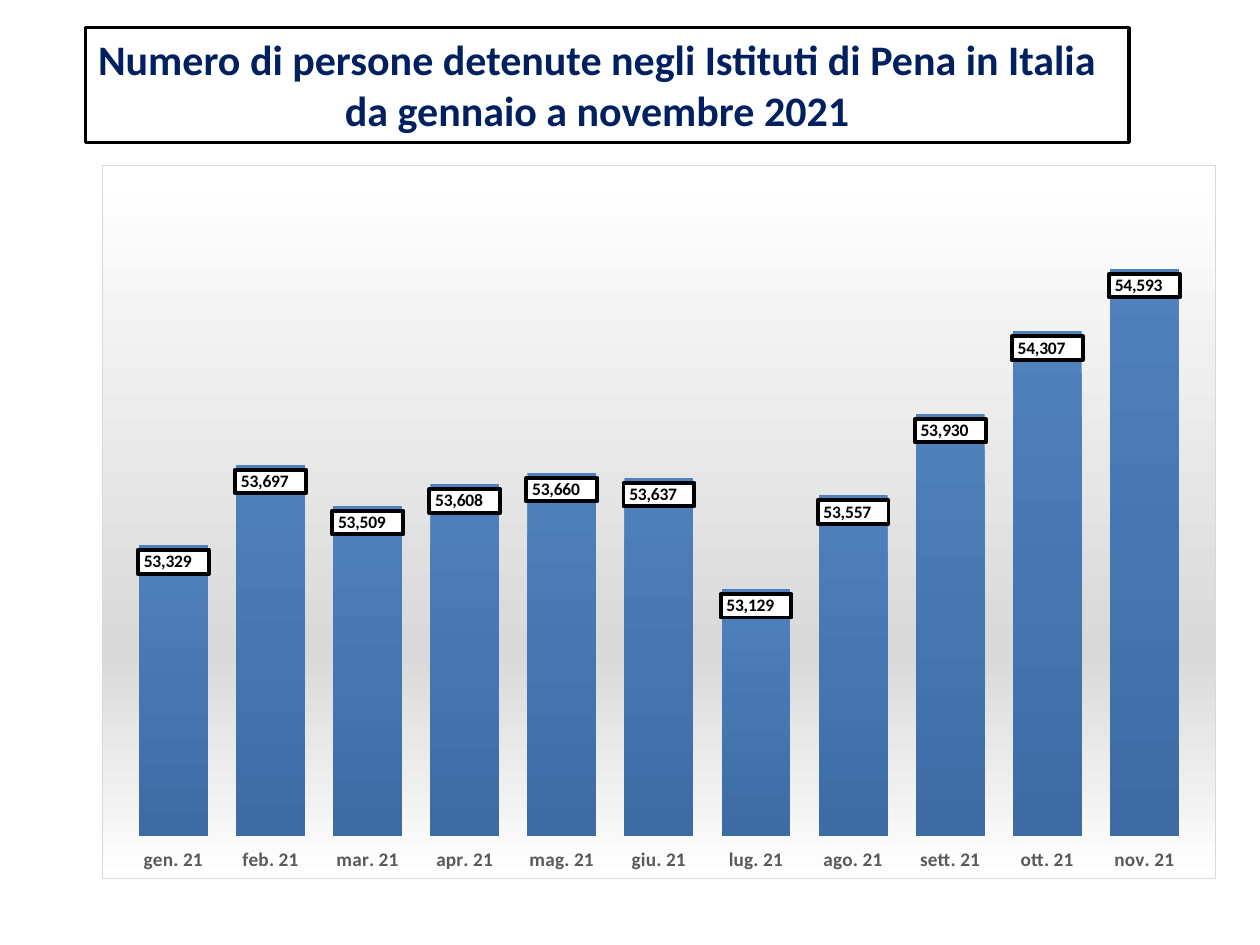
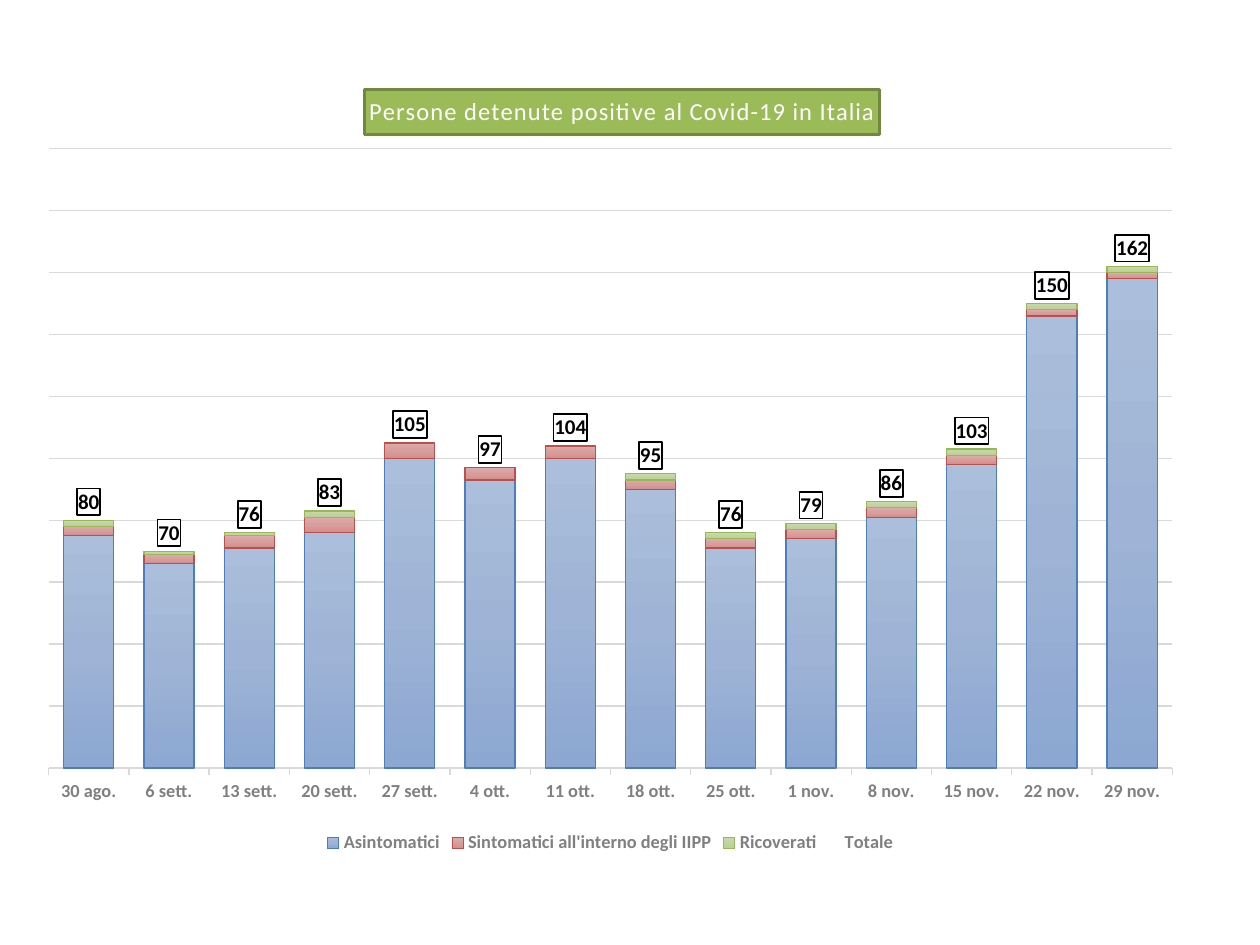
"""Build two slides of column charts about people held in Italian prisons."""
from lxml.etree import fromstring
from pptx import Presentation
from pptx.chart.data import CategoryChartData
from pptx.dml.color import RGBColor
from pptx.enum.chart import (XL_CHART_TYPE, XL_LABEL_POSITION, XL_LEGEND_POSITION,
                             XL_TICK_LABEL_POSITION, XL_TICK_MARK)
from pptx.enum.text import MSO_ANCHOR, MSO_AUTO_SIZE, PP_ALIGN
from pptx.oxml.ns import qn
from pptx.util import Inches, Pt

FONT = "Calibri"
BLACK, WHITE, PALE = "000000", "FFFFFF", "D9D9D9"
WIDE, HIGH = 10, 7.5
NS = ('xmlns:c="http://schemas.openxmlformats.org/drawingml/2006/chart" '
      'xmlns:a="http://schemas.openxmlformats.org/drawingml/2006/main"')

HEAD = [("Numero di persone detenute negli Istituti di Pena in Italia", PP_ALIGN.LEFT),
        ("da gennaio a novembre 2021", PP_ALIGN.CENTER)]
MONTHS = ["gen.", "feb.", "mar.", "apr.", "mag.", "giu.", "lug.", "ago.", "sett.",
          "ott.", "nov."]
HELD = [53329, 53697, 53509, 53608, 53660, 53637, 53129, 53557, 53930, 54307, 54593]
FORMAT = '_-* #,##0\\ _€_-;\\-* #,##0\\ _€_-;_-* "-"?'

COVID = "Persone detenute positive al Covid-19 in Italia"
WEEKS = ["30 ago.", "6 sett.", "13 sett.", "20 sett.", "27 sett.", "4 ott.", "11 ott.",
         "18 ott.", "25 ott.", "1 nov.", "8 nov.", "15 nov.", "22 nov.", "29 nov."]
CASES = {
    "Asintomatici": [75, 66, 71, 76, 100, 93, 100, 90, 71, 74, 81, 98, 146, 158],
    "Sintomatici all'interno degli IIPP": [3, 3, 4, 5, 5, 4, 4, 3, 3, 3, 3, 3, 2, 2],
    "Ricoverati": [2, 1, 1, 2, 0, 0, 0, 2, 2, 2, 2, 2, 2, 2],
}
CASES["Totale"] = [sum(week) for week in zip(*CASES.values())]
TINTS = [
    ([(0, "ABBEDB"), (50, "9EB3D5"), (100, "8CA7D2")], "4D7EB9", 0.75),
    ([(0, "DDACAB"), (50, "D79E9D"), (100, "D48D8B")], "BC4E4B", 0.75),
    ([(0, "CADAAF"), (50, "C1D4A2"), (100, "B9D091")], "98B757", 0.75),
    ([],),
]


def hue(code):
    return RGBColor.from_string(code)


def style(font, size, color, bold=True):
    font.name, font.size, font.bold = FONT, Pt(size), bold
    font.color.rgb = hue(color)


def write(frame, text, size=24, color=BLACK, bold=True, align=None, first=True):
    para = frame.paragraphs[0] if first else frame.add_paragraph()
    para.alignment = align
    run = para.add_run()
    run.text = text
    style(run.font, size, color, bold)
    return run


def look(stops, line=None, width=0.75):
    """Return shape properties: no fill, one colour or a downward gradient."""
    def solid(code):
        return f'<a:solidFill><a:srgbClr val="{code}"/></a:solidFill>'
    if not stops:
        fill = "<a:noFill/>"
    elif len(stops) == 1:
        fill = solid(stops[0][1])
    else:
        marks = "".join(f'<a:gs pos="{at * 1000}"><a:srgbClr val="{code}"/></a:gs>'
                        for at, code in stops)
        fill = f'<a:gradFill><a:gsLst>{marks}</a:gsLst><a:lin ang="5400000" scaled="0"/></a:gradFill>'
    edge = solid(line) if line else "<a:noFill/>"
    return fromstring(f'<c:spPr {NS}>{fill}<a:ln w="{int(width * 12700)}">{edge}</a:ln></c:spPr>')


def place(node, index, **parts):
    """Fix a chart part at shares of the chart's size."""
    for old in node.findall(qn("c:layout")):
        node.remove(old)
    inner = '<c:layoutTarget val="inner"/>' if "w" in parts else ""
    modes = "".join(f'<c:{key}Mode val="edge"/>' for key in "xy")
    sizes = "".join(f'<c:{key} val="{val}"/>' for key, val in parts.items())
    node.insert(index, fromstring(
        f'<c:layout {NS}><c:manualLayout>{inner}{modes}{sizes}</c:manualLayout></c:layout>'))


def draw(slide, box, kind, cats, data, looks, gap, span, area):
    """Add a column chart with a hidden value axis."""
    info = CategoryChartData()
    info.categories = cats
    for name, vals in data.items():
        info.add_series(name, vals)
    chart = slide.shapes.add_chart(kind, *map(Inches, box), info).chart
    style(chart.font, 10, BLACK, False)
    chart.has_title = chart.has_legend = False
    plot = chart.plots[0]
    plot.gap_width, plot.vary_by_categories = gap, False
    axis = chart.value_axis
    axis.minimum_scale, axis.maximum_scale, axis.major_unit = span
    axis.has_major_gridlines = axis.visible = False
    chart.category_axis.tick_label_position = XL_TICK_LABEL_POSITION.LOW
    for ser, args in zip(plot.series, looks):
        node = ser._element
        node.replace(node.get_or_add_spPr(), look(*args))
    place(chart._chartSpace.chart.plotArea, 0, **area)
    return chart


def label(ser, size, spot, width, code="General"):
    tags = ser.data_labels
    tags.show_value = True
    tags.number_format, tags.number_format_is_linked = code, False
    tags.position = spot
    style(tags.font, size, BLACK)
    tags._element.find(qn("c:txPr")).addprevious(look([(0, WHITE)], BLACK, width))


def count(slide):
    box = slide.shapes.add_textbox(*map(Inches, (0.68, 0.22, 8.28, 0.91)))
    box.fill.solid()
    box.fill.fore_color.rgb = hue(WHITE)
    box.line.color.rgb, box.line.width = hue(BLACK), Pt(2)
    frame = box.text_frame
    frame.word_wrap, frame.auto_size = False, MSO_AUTO_SIZE.SHAPE_TO_FIT_TEXT
    frame.vertical_anchor = MSO_ANCHOR.TOP
    for row, (text, align) in enumerate(HEAD):
        write(frame, text, color="002060", align=align, first=row == 0)
    chart = draw(slide, (0.81, 1.31, 8.84, 5.67), XL_CHART_TYPE.COLUMN_CLUSTERED,
                 [f"{month} 21" for month in MONTHS], {"Series 1": HELD},
                 [([(0, "4F81BD"), (100, "3D6CA4")],)], 41, (52000, 55000, 500),
                 dict(x=0.02, y=0.02, w=0.96, h=0.92))
    chart._chartSpace.chart.addnext(look([(0, WHITE), (68, PALE), (100, WHITE)], PALE))
    axis = chart.category_axis
    axis.major_tick_mark = XL_TICK_MARK.NONE
    axis.format.line.fill.background()
    style(axis.tick_labels.font, 11, "595959")
    label(chart.plots[0].series[0], 10, XL_LABEL_POSITION.INSIDE_END, 2.25, FORMAT)


def covid(slide):
    chart = draw(slide, (0.2, 0.52, 9.29, 6.3), XL_CHART_TYPE.COLUMN_STACKED, WEEKS,
                 CASES, TINTS, 60, (0, 200, 20), dict(x=0.02, y=0.105, w=0.96, h=0.78))
    chart.plots[0].overlap = 100
    chart.has_title = True
    title = chart.chart_title
    run = write(title.text_frame, COVID, size=14, color=WHITE, bold=False)
    run.font._element.set("spc", "50")
    title.format.fill.solid()
    title.format.fill.fore_color.rgb = hue("9BBB59")
    title.format.line.color.rgb, title.format.line.width = hue("71893F"), Pt(1.5)
    place(title._element, 1, x=0.29, y=0.03)
    rows, axis = chart.value_axis, chart.category_axis
    rows.has_major_gridlines = True
    for line in (rows.major_gridlines.format.line, axis.format.line):
        line.color.rgb, line.width = hue(PALE), Pt(0.75)
    axis.major_tick_mark = XL_TICK_MARK.OUTSIDE
    chart.has_legend = True
    key = chart.legend
    key.position, key.include_in_layout = XL_LEGEND_POSITION.BOTTOM, False
    for font in (axis.tick_labels.font, key.font):
        style(font, 10.5, "808080")
    label(chart.plots[0].series[-1], 12, XL_LABEL_POSITION.INSIDE_BASE, 1)


def main():
    deck = Presentation()
    deck.slide_width, deck.slide_height = Inches(WIDE), Inches(HIGH)
    for build in (count, covid):
        build(deck.slides.add_slide(deck.slide_layouts[6]))
    deck.save("out.pptx")


if __name__ == "__main__":
    main()
